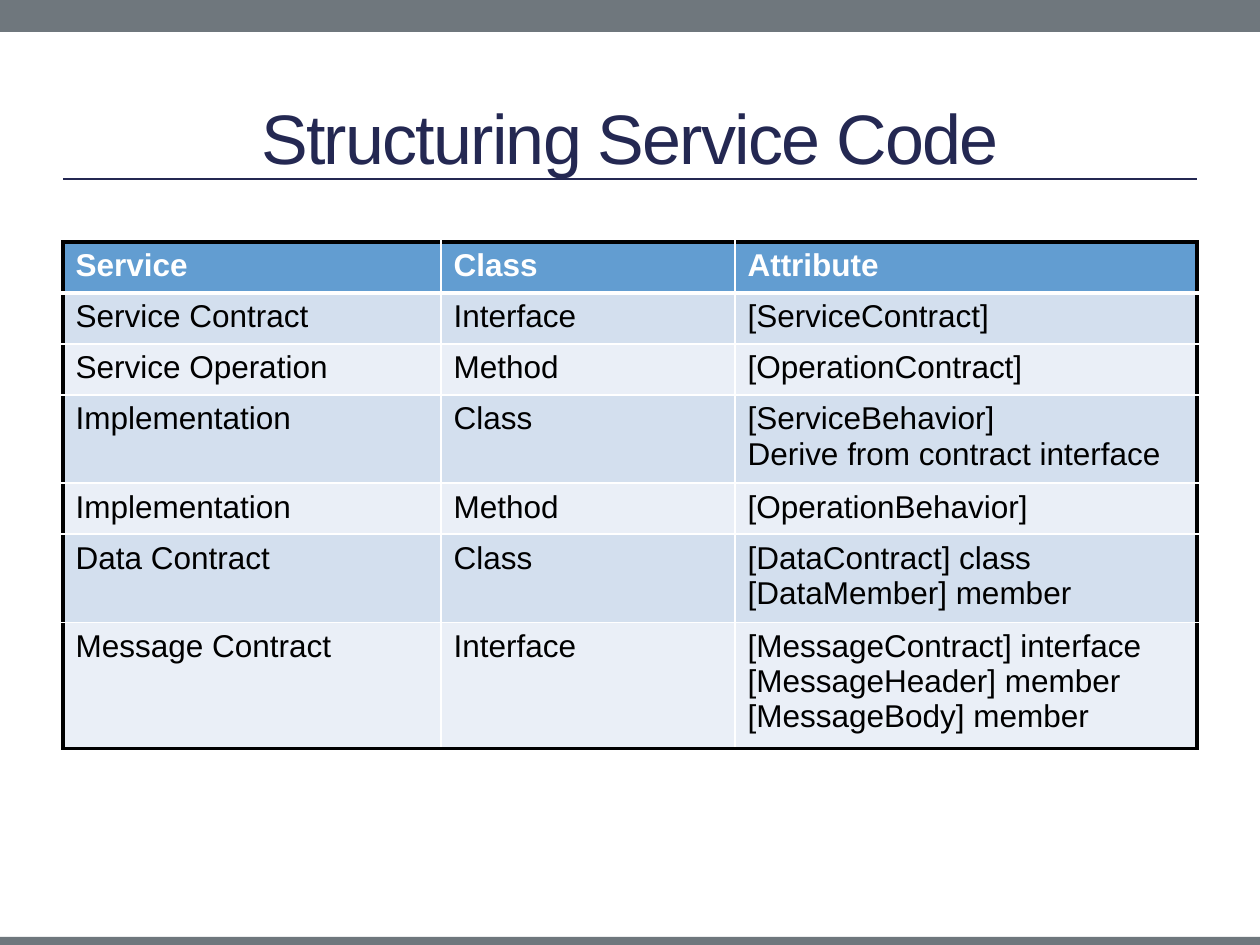
from lxml import etree
from pptx import Presentation
from pptx.dml.color import RGBColor
from pptx.enum.shapes import MSO_CONNECTOR, MSO_SHAPE
from pptx.enum.text import MSO_ANCHOR, PP_ALIGN
from pptx.oxml.ns import qn
from pptx.util import Emu, Pt

STRAIGHT = MSO_CONNECTOR.STRAIGHT
RECTANGLE = MSO_SHAPE.RECTANGLE
MIDDLE = MSO_ANCHOR.MIDDLE
CENTER = PP_ALIGN.CENTER

THEME = {
    "font": "Arial",
    "title_size": 40,
    "cell_size": 18,
    "navy": "242852",
    "bar": "6F777D",
    "header": "629DD1",
    "bands": ("D3DFEE", "EAEFF7"),
    "white": "FFFFFF",
    "black": "000000",
}
OUTER_BORDER = (THEME["black"], 2.25)
INNER_BORDER = (THEME["white"], 1)
HEADER_BORDER = (THEME["white"], 3)

SLIDE_WIDTH, SLIDE_HEIGHT = 1260, 945
LEFT, CONTENT_WIDTH = 63, 1134
COLUMN_WIDTHS = (378, 294, 462)
ROW_HEIGHTS = (51, 51, 51, 88, 51, 88, 126)
ROWS = (
    ("Service", "Class", "Attribute"),
    ("Service Contract", "Interface", "[ServiceContract]"),
    ("Service Operation", "Method", "[OperationContract]"),
    ("Implementation", "Class", "[ServiceBehavior]\nDerive from contract interface"),
    ("Implementation", "Method", "[OperationBehavior]"),
    ("Data Contract", "Class", "[DataContract] class\n[DataMember] member"),
    ("Message Contract", "Interface",
     "[MessageContract] interface\n[MessageHeader] member\n[MessageBody] member"),
)


def px(length):
    """Turn pixels at 126 to the inch into EMU."""
    return Emu(round(length * 914400 / 126))


def set_borders(cell, borders):
    """Draw the left, right, top and bottom borders, each a (color, points) pair."""
    properties = cell._tc.get_or_add_tcPr()
    for index, (side, (color, width)) in enumerate(zip("LRTB", borders)):
        line = etree.Element(qn(f"a:ln{side}"), w=str(Pt(width)))
        fill = etree.SubElement(line, qn("a:solidFill"))
        etree.SubElement(fill, qn("a:srgbClr"), val=color)
        properties.insert(index, line)


deck = Presentation()
deck.slide_width, deck.slide_height = px(SLIDE_WIDTH), px(SLIDE_HEIGHT)
slide = deck.slides.add_slide(deck.slide_layouts[6])

# Bars along the top and bottom edges
for top, height in ((0, 32), (937, 13)):
    bar = slide.shapes.add_shape(RECTANGLE, 0, px(top), px(SLIDE_WIDTH), px(height))
    bar.shadow.inherit = False
    bar.fill.solid()
    bar.fill.fore_color.rgb = RGBColor.from_string(THEME["bar"])
    bar.line.fill.background()

# Title and its rule
rule = slide.shapes.add_connector(
    STRAIGHT, px(LEFT), px(179), px(LEFT + CONTENT_WIDTH), px(179))
rule.line.color.rgb = RGBColor.from_string(THEME["navy"])
rule.line.width = Pt(1.5)
etree.SubElement(rule._element.spPr, qn("a:effectLst"))

title = slide.shapes.add_textbox(px(LEFT), px(63), px(CONTENT_WIDTH), px(136))
frame = title.text_frame
frame.word_wrap = True
frame.vertical_anchor = MIDDLE
frame.margin_top, frame.margin_bottom = px(18), px(6)
para = frame.paragraphs[0]
para.alignment = CENTER
span = para.add_run()
span.text = "Structuring Service Code"
span.font.name = THEME["font"]
span.font.size = Pt(THEME["title_size"])
span.font.color.rgb = RGBColor.from_string(THEME["navy"])
span.font._element.set("spc", "-100")

# Table of service parts
table = slide.shapes.add_table(
    len(ROWS), len(COLUMN_WIDTHS), px(LEFT), px(242),
    px(CONTENT_WIDTH), px(sum(ROW_HEIGHTS))).table
for column, width in zip(table.columns, COLUMN_WIDTHS):
    column.width = px(width)
for row, height in zip(table.rows, ROW_HEIGHTS):
    row.height = px(height)

last_row, last_column = len(ROWS) - 1, len(COLUMN_WIDTHS) - 1
for r, texts in enumerate(ROWS):
    is_header = r == 0
    fill_color = THEME["header"] if is_header else THEME["bands"][(r - 1) % 2]
    text_color = THEME["white"] if is_header else THEME["black"]
    top_border = {0: OUTER_BORDER, 1: HEADER_BORDER}.get(r, INNER_BORDER)
    bottom_border = {0: HEADER_BORDER, last_row: OUTER_BORDER}.get(r, INNER_BORDER)
    for c, text in enumerate(texts):
        cell = table.cell(r, c)
        cell.fill.solid()
        cell.fill.fore_color.rgb = RGBColor.from_string(fill_color)
        set_borders(cell, (
            OUTER_BORDER if c == 0 else INNER_BORDER,
            OUTER_BORDER if c == last_column else INNER_BORDER,
            top_border,
            bottom_border,
        ))
        cell.text_frame.text = text
        for para in cell.text_frame.paragraphs:
            para.font.name = THEME["font"]
            para.font.size = Pt(THEME["cell_size"])
            para.font.bold = is_header
            para.font.color.rgb = RGBColor.from_string(text_color)

deck.save("out.pptx")
